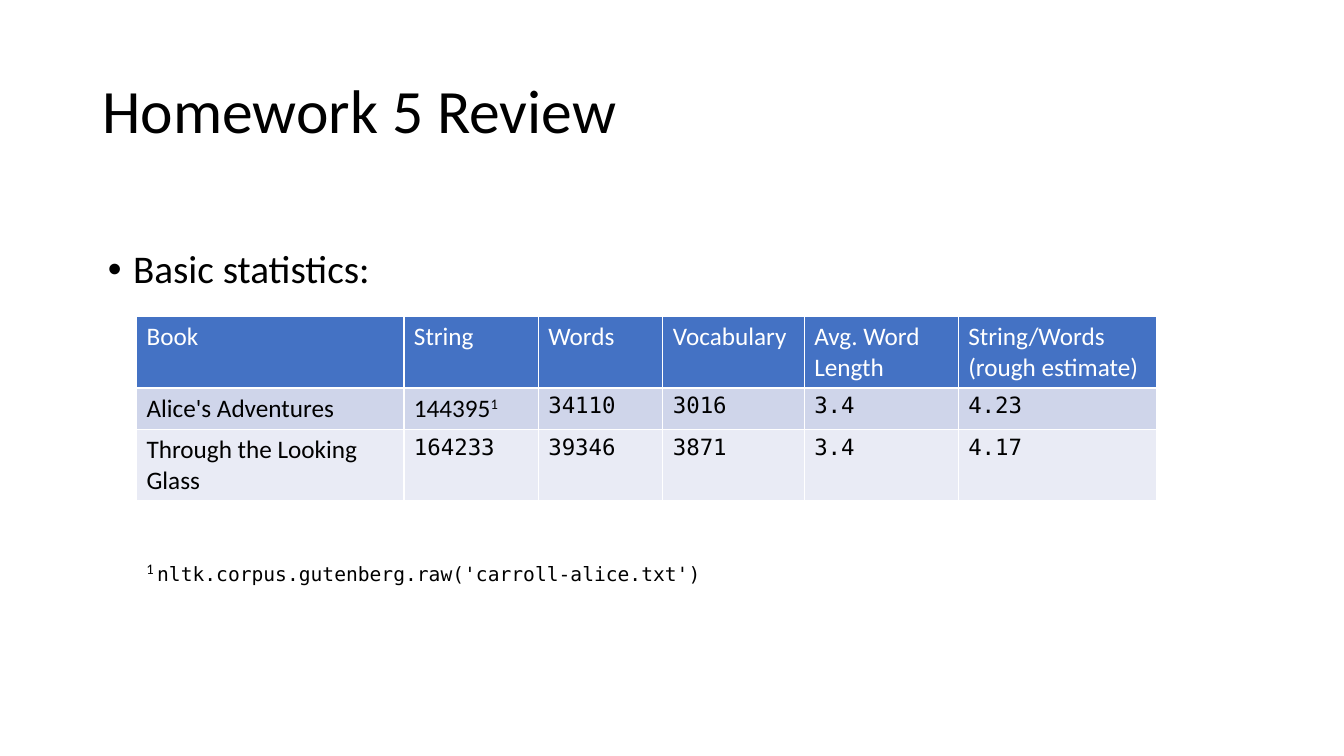
from lxml.etree import SubElement
from pptx import Presentation
from pptx.dml.color import RGBColor
from pptx.enum.text import MSO_ANCHOR as Anchor, MSO_AUTO_SIZE as AutoSize, PP_ALIGN as Align
from pptx.oxml.ns import qn
from pptx.util import Pt

SANS, MONO = "Calibri", "DejaVu Sans Mono"
BLACK, WHITE = "000000", "FFFFFF"
HEADER_FILL = "4472C4"
BAND_FILLS = ["CFD5EA", "E9EBF5"]

HEADINGS = ["Book", "String", "Words", "Vocabulary", "Avg. Word Length",
            "String/Words\n(rough estimate)"]
BOOKS = [
    ["Alice's Adventures", "144395", "34110", "3016", "3.4", "4.23"],
    ["Through the Looking Glass", "164233", "39346", "3871", "3.4", "4.17"],
]
COLUMN_WIDTHS = [191, 96, 89, 101, 110, 142]
ROW_HEIGHTS = [51, 29.5, 51]


def set_font(font, size, name=SANS, color=BLACK):
    font.size = Pt(size)
    font.name = name
    font.bold = False
    font.color.rgb = RGBColor.from_string(color)


def add_superscript(paragraph, text):
    run = paragraph.add_run()
    run.text = text
    run._r.get_or_add_rPr().set("baseline", "30000")
    return run


def add_title(slide, text):
    title = slide.shapes.title
    title.left, title.top, title.width, title.height = Pt(66), Pt(28.8), Pt(828), Pt(104.4)
    title.text_frame.text = text
    title.text_frame.vertical_anchor = Anchor.MIDDLE
    paragraph = title.text_frame.paragraphs[0]
    paragraph.alignment = Align.LEFT
    paragraph.line_spacing = 0.9
    set_font(paragraph.font, 44)


def add_text_box(slide, left, top, width, height, wrap=True):
    frame = slide.shapes.add_textbox(Pt(left), Pt(top), Pt(width), Pt(height)).text_frame
    frame.word_wrap = wrap
    return frame


def add_bullet(slide, text):
    paragraph = add_text_box(slide, 70, 175, 820, 40).paragraphs[0]
    paragraph.text = text
    paragraph.line_spacing = 0.9
    properties = paragraph._p.get_or_add_pPr()
    properties.set("marL", str(Pt(18)))
    properties.set("indent", str(-Pt(18)))
    SubElement(properties, qn("a:buFont"), typeface="Arial")
    SubElement(properties, qn("a:buChar"), char="•")
    set_font(paragraph.font, 28)


def fill_cell(cell, text, fill, size, name, color):
    cell.text = text
    cell.fill.solid()
    cell.fill.fore_color.rgb = RGBColor.from_string(fill)
    for paragraph in cell.text_frame.paragraphs:
        set_font(paragraph.font, size, name, color)
        for run in paragraph.runs:  # overrides the table style
            set_font(run.font, size, name, color)


def add_statistics(slide):
    rows = [HEADINGS] + BOOKS
    table = slide.shapes.add_table(
        len(rows), len(HEADINGS), Pt(97.5), Pt(226),
        Pt(sum(COLUMN_WIDTHS)), Pt(sum(ROW_HEIGHTS))).table
    for column, width in zip(table.columns, COLUMN_WIDTHS):
        column.width = Pt(width)
    for row, height in zip(table.rows, ROW_HEIGHTS):
        row.height = Pt(height)

    for column, heading in enumerate(HEADINGS):
        fill_cell(table.cell(0, column), heading, HEADER_FILL, 18, SANS, WHITE)
    for row, (book, fill) in enumerate(zip(BOOKS, BAND_FILLS), start=1):
        for column, value in enumerate(book):
            # The footnoted count is set like the book titles
            plain = column == 0 or (row, column) == (1, 1)
            size, name = (18, SANS) if plain else (16, MONO)
            fill_cell(table.cell(row, column), value, fill, size, name, BLACK)

    mark = add_superscript(table.cell(1, 1).text_frame.paragraphs[0], "1")
    set_font(mark.font, 18)


def add_footnote(slide, mark, code):
    frame = add_text_box(slide, 97.5, 394, 414, 29, wrap=False)
    frame.auto_size = AutoSize.SHAPE_TO_FIT_TEXT
    paragraph = frame.paragraphs[0]
    set_font(add_superscript(paragraph, mark + " ").font, 18)
    run = paragraph.add_run()
    run.text = code
    set_font(run.font, 14, MONO)


def main():
    presentation = Presentation()
    presentation.slide_width, presentation.slide_height = Pt(960), Pt(540)
    slide = presentation.slides.add_slide(presentation.slide_layouts[5])

    add_title(slide, "Homework 5 Review")
    add_statistics(slide)
    add_bullet(slide, "Basic statistics:")
    add_footnote(slide, "1", "nltk.corpus.gutenberg.raw('carroll-alice.txt')")
    presentation.save("out.pptx")


if __name__ == "__main__":
    main()
